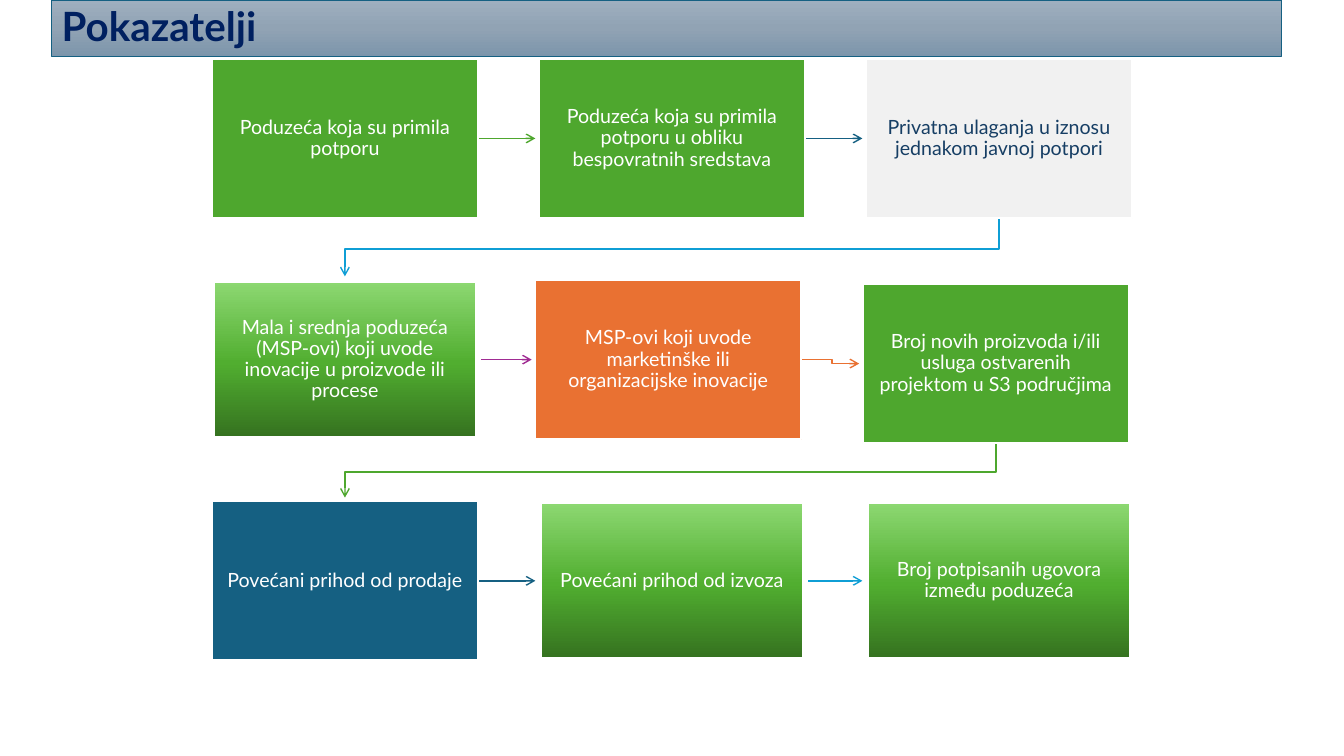
import copy

import pptx
import pptx.dml.color
import pptx.enum.shapes
import pptx.enum.text
import pptx.oxml
import pptx.oxml.ns
import pptx.util

Pt = pptx.util.Pt
RGBColor = pptx.dml.color.RGBColor

WHITE = RGBColor(0xFF, 0xFF, 0xFF)
GREEN = RGBColor(0x4E, 0xA7, 0x2E)
ORANGE = RGBColor(0xE9, 0x71, 0x32)
TEAL = RGBColor(0x15, 0x60, 0x82)
BLUE = RGBColor(0x0F, 0x9E, 0xD5)
PURPLE = RGBColor(0xA0, 0x2B, 0x93)
LIGHT_GREY = RGBColor(0xF1, 0xF1, 0xF1)
DARK_BLUE = RGBColor(0x16, 0x3E, 0x64)
NAVY = RGBColor(0x00, 0x20, 0x60)
GREEN_SHADES = [(0, RGBColor(0x34, 0x70, 0x1F)), (0.48, RGBColor(0x51, 0xAE, 0x30)),
                (1, RGBColor(0x8E, 0xD9, 0x73))]
TITLE_SHADES = [(0, RGBColor(0x9E, 0xAF, 0xBF)), (0.5, RGBColor(0x91, 0xA3, 0xB4)),
                (1, RGBColor(0x7C, 0x95, 0xAB))]

FONT = "Lato"
COLUMNS = 3
BOX_WIDTH, BOX_HEIGHT = 190, 113.8
COLUMN_PITCH, ROW_PITCH = 233.6, 158
ARROW_GAP = 2.6
BEND_SHIFT = 1.2

# Text, fill, text colour, colour of the outgoing arrow, shift from the grid
INDICATORS = [
    ("Poduzeća koja su primila potporu", GREEN, WHITE, GREEN, (0, 0)),
    ("Poduzeća koja su primila potporu u obliku bespovratnih sredstava",
     GREEN, WHITE, TEAL, (0, 0)),
    ("Privatna ulaganja u iznosu jednakom javnoj potpori",
     LIGHT_GREY, DARK_BLUE, BLUE, (0, 0)),
    ("Mala i srednja poduzeća (MSP-ovi) koji uvode inovacije u proizvode ili procese",
     GREEN_SHADES, WHITE, PURPLE, (0, 0)),
    ("MSP-ovi koji uvode marketinške ili organizacijske inovacije",
     ORANGE, WHITE, ORANGE, (-2.6, 0)),
    ("Broj novih proizvoda i/ili usluga ostvarenih projektom u S3 područjima",
     GREEN, WHITE, GREEN, (-2.3, 2.8)),
    ("Povećani prihod od prodaje", TEAL, WHITE, TEAL, (0, 0)),
    ("Povećani prihod od izvoza", GREEN_SHADES, WHITE, BLUE, (0, 0)),
    ("Broj potpisanih ugovora između poduzeća", GREEN_SHADES, WHITE, None, (0, 0)),
]


def fill_gradient(shape, shades, angle):
    """Fill with three shades; the angle runs counter-clockwise."""
    shape.fill.gradient()
    shape.fill.gradient_angle = angle
    stop_list = shape.element.spPr.find(".//" + pptx.oxml.ns.qn("a:gsLst"))
    stop_list.append(copy.deepcopy(stop_list[-1]))
    for stop, (position, color) in zip(shape.fill.gradient_stops, shades):
        stop.position = position
        stop.color.rgb = color


def add_rectangle(slide, left, top, width, height, text, line_color, line_width):
    shape = slide.shapes.add_shape(
        pptx.enum.shapes.MSO_SHAPE.RECTANGLE, Pt(left), Pt(top), Pt(width), Pt(height))
    shape.shadow.inherit = False
    shape.line.color.rgb = line_color
    shape.line.width = Pt(line_width)
    frame = shape.text_frame
    frame.word_wrap = True
    frame.vertical_anchor = pptx.enum.text.MSO_ANCHOR.MIDDLE
    paragraph = frame.paragraphs[0]
    paragraph.text = text
    paragraph.line_spacing = 0.9
    paragraph.font.name = FONT
    return shape


def add_title_bar(slide, left, top, width, height):
    bar = add_rectangle(slide, left, top, width, height, "Pokazatelji", TEAL, 1)
    fill_gradient(bar, TITLE_SHADES, 270)
    paragraph = bar.text_frame.paragraphs[0]
    paragraph.alignment = pptx.enum.text.PP_ALIGN.LEFT
    paragraph.font.size = Pt(28.8)
    paragraph.font.bold = True
    paragraph.font.color.rgb = NAVY


def add_indicator(slide, left, top, text, fill, text_color):
    shaded = isinstance(fill, list)
    box = add_rectangle(slide, left, top, BOX_WIDTH, BOX_HEIGHT, text, WHITE,
                        4.5 if shaded else 1.5)
    if shaded:
        fill_gradient(box, fill, 90)
    else:
        box.fill.solid()
        box.fill.fore_color.rgb = fill
    frame = box.text_frame
    frame.margin_left = frame.margin_right = Pt(9.4)
    frame.margin_top = frame.margin_bottom = Pt(9.8)
    paragraph = frame.paragraphs[0]
    paragraph.alignment = pptx.enum.text.PP_ALIGN.CENTER
    paragraph.font.size = Pt(14)
    paragraph.font.color.rgb = text_color
    return box


def arrow_route(start, end):
    """Return the corner points from one box position to the next."""
    if end[0] > start[0]:
        x1, y1 = start[0] + BOX_WIDTH, start[1] + BOX_HEIGHT / 2
        x2, y2 = end[0] - ARROW_GAP, end[1] + BOX_HEIGHT / 2
        if y1 == y2:
            return [(x1, y1), (x2, y2)]
        bend = (x1 + x2) / 2 + BEND_SHIFT
        return [(x1, y1), (bend, y1), (bend, y2), (x2, y2)]
    x1, y1 = start[0] + BOX_WIDTH / 2, start[1] + BOX_HEIGHT
    x2, y2 = end[0] + BOX_WIDTH / 2, end[1] - ARROW_GAP
    bend = (y1 + y2) / 2 + BEND_SHIFT
    return [(x1, y1), (x1, bend), (x2, bend), (x2, y2)]


def add_arrow(slide, route, color):
    points = [(Pt(x), Pt(y)) for x, y in route]
    if len(points) == 2:
        arrow = slide.shapes.add_connector(
            pptx.enum.shapes.MSO_CONNECTOR.STRAIGHT, *points[0], *points[1])
        arrow.element.spPr.append(pptx.oxml.parse_xml(
            f"<a:effectLst {pptx.oxml.ns.nsdecls('a')}/>"))
    else:
        builder = slide.shapes.build_freeform(*points[0])
        builder.add_line_segments(points[1:], close=False)
        arrow = builder.convert_to_shape()
        arrow.fill.background()
        arrow.shadow.inherit = False
    arrow.line.color.rgb = color
    arrow.line.width = Pt(1)
    arrow.line._get_or_add_ln().append(pptx.oxml.parse_xml(
        f"<a:tailEnd {pptx.oxml.ns.nsdecls('a')} type='arrow'/>"))
    return arrow


def add_indicator_flow(slide, left, top):
    """Lay the boxes over their arrows, row by row."""
    positions = []
    for index, (*_, (shift_x, shift_y)) in enumerate(INDICATORS):
        row, column = divmod(index, COLUMNS)
        positions.append((left + column * COLUMN_PITCH + shift_x,
                          top + row * ROW_PITCH + shift_y))
    routes = [arrow_route(*pair) for pair in zip(positions, positions[1:])]
    arrows = [add_arrow(slide, route, indicator[3])
              for route, indicator in zip(routes, INDICATORS)]
    boxes = [add_indicator(slide, *position, *indicator[:3])
             for position, indicator in zip(positions, INDICATORS)]
    for arrow, route, box in zip(arrows, routes, boxes):
        if len(route) == 2:
            arrow.begin_connect(box, 3)


def main():
    presentation = pptx.Presentation()
    presentation.slide_width = Pt(960)
    presentation.slide_height = Pt(540)
    slide = presentation.slides.add_slide(presentation.slide_layouts[6])
    add_indicator_flow(slide, 151.4, 42)
    add_title_bar(slide, 37, 0, 878.4, 40.4)
    presentation.save("out.pptx")


if __name__ == "__main__":
    main()
